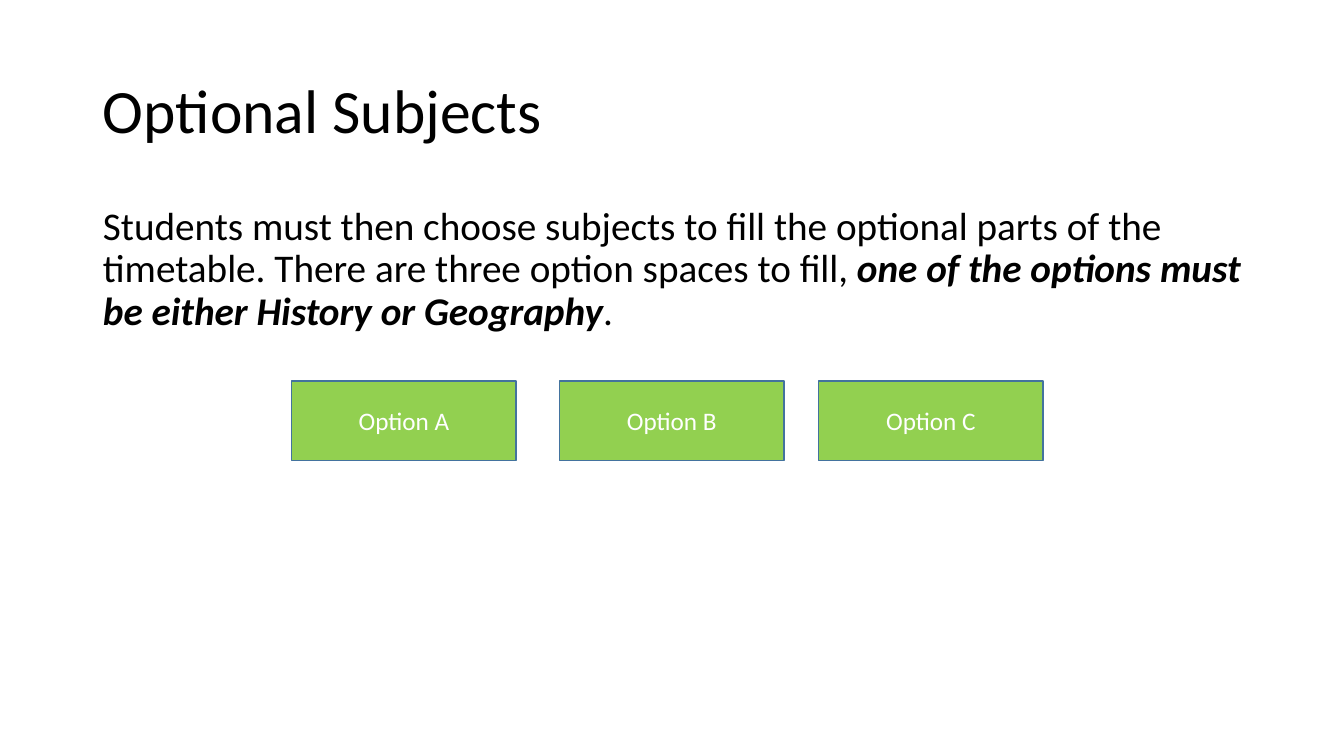
from dataclasses import dataclass

from lxml.etree import SubElement
from pptx import Presentation
from pptx.dml.color import RGBColor
from pptx.enum.shapes import MSO_SHAPE as Shape
from pptx.enum.text import MSO_ANCHOR as Anchor, MSO_AUTO_SIZE as AutoSize, PP_ALIGN as Align
from pptx.oxml.ns import qn
from pptx.util import Cm, Pt

COLOURS = {"text": "000000", "option_text": "FFFFFF", "option_fill": "92D050", "option_line": "43739E"}
FONT = "Calibri"


@dataclass(frozen=True)
class Option:
    """One option space on the timetable, with its left edge in centimetres."""
    label: str
    left: float


OPTIONS = [Option("Option A", 7.35), Option("Option B", 14.1), Option("Option C", 20.63)]


def colour(name: str) -> RGBColor:
    """Look up a colour by its role."""
    return RGBColor.from_string(COLOURS[name])


def add_span(para, text: str, size: float, colour_name: str = "text", strong: bool = False) -> None:
    """Add one run, bold and italic when strong."""
    span = para.add_run()
    span.text = text
    span.font.name = FONT
    span.font.size = Pt(size)
    span.font.bold = strong
    span.font.italic = strong
    span.font.color.rgb = colour(colour_name)


def prepare_placeholder(box, top: float, height: float, anchor: Anchor):
    """Place a placeholder across the page and return its first paragraph."""
    box.left, box.top, box.width, box.height = Cm(2.34), Cm(top), Cm(29.21), Cm(height)
    frame = box.text_frame
    frame.word_wrap = True
    frame.auto_size = AutoSize.NONE
    frame.vertical_anchor = anchor
    para = frame.paragraphs[0]
    para.alignment = Align.LEFT
    para.line_spacing = 0.9
    para.space_before = Pt(0)
    return para


def remove_bullet(para) -> None:
    """Show a body paragraph flush left without a bullet."""
    properties = para._p.get_or_add_pPr()
    properties.set("marL", "0")
    properties.set("indent", "0")
    SubElement(properties, qn("a:buNone"))


def add_option(page, option: Option) -> None:
    """Draw one option box."""
    box = page.shapes.add_shape(Shape.RECTANGLE, Cm(option.left), Cm(9.6), Cm(5.66), Cm(2))
    box.shadow.inherit = False
    box.fill.solid()
    box.fill.fore_color.rgb = colour("option_fill")
    box.line.color.rgb = colour("option_line")
    box.line.width = Pt(1)
    box.text_frame.vertical_anchor = Anchor.MIDDLE
    para = box.text_frame.paragraphs[0]
    para.alignment = Align.CENTER
    add_span(para, option.label, 18, "option_text")


def main() -> None:
    """Build and save the deck."""
    deck = Presentation()
    deck.slide_width, deck.slide_height = Cm(33.87), Cm(19.05)
    page = deck.slides.add_slide(deck.slide_layouts[1])

    title = prepare_placeholder(page.shapes.title, 1.02, 3.68, Anchor.MIDDLE)
    add_span(title, "Optional Subjects", 44)

    body = prepare_placeholder(page.placeholders[1], 5.08, 12.09, Anchor.TOP)
    remove_bullet(body)
    add_span(body, "Students must then choose subjects to fill the optional parts of the timetable. "
                   "There are three option spaces to fill, ", 28)
    add_span(body, "one of the options must be either History or Geography", 28, strong=True)
    add_span(body, ".", 28)

    for option in OPTIONS:
        add_option(page, option)
    deck.save("out.pptx")


if __name__ == "__main__":
    main()
